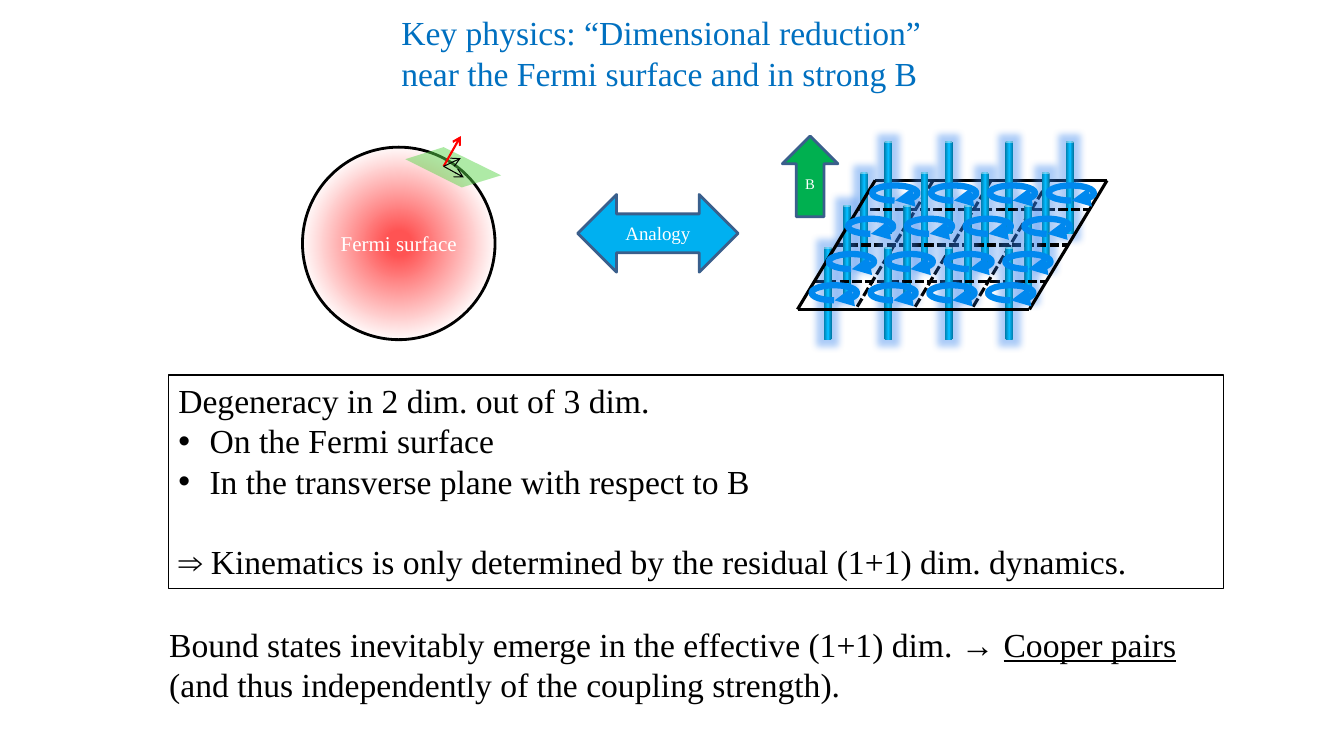
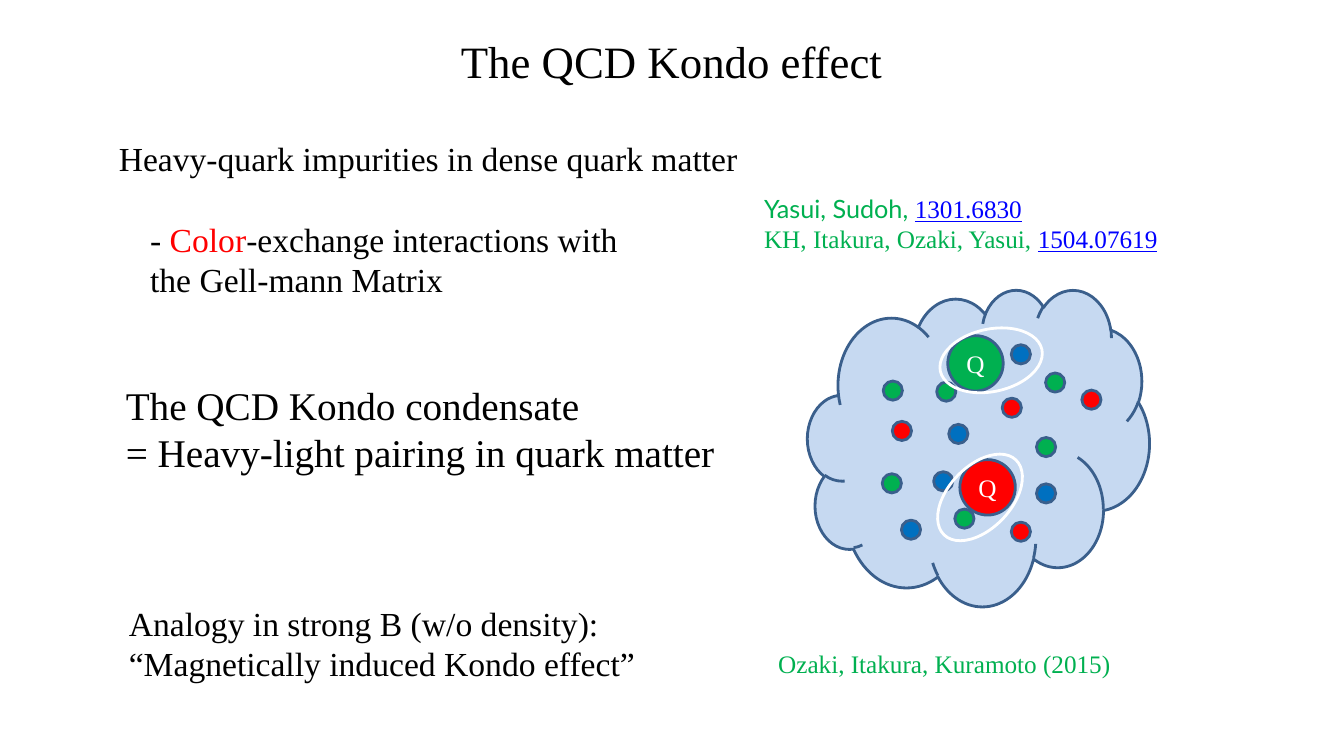
from dataclasses import dataclass

from lxml.etree import SubElement
from pptx import Presentation
from pptx.dml.color import RGBColor
from pptx.enum.dml import MSO_LINE
from pptx.enum.shapes import MSO_CONNECTOR, MSO_SHAPE
from pptx.enum.text import MSO_ANCHOR, MSO_AUTO_SIZE, PP_ALIGN
from pptx.oxml.ns import qn
from pptx.util import Inches, Pt

CELL = Inches(1) / 6  # the slide is a grid of 80 columns and 45 rows
SERIF, SANS = "Times New Roman", "Lato"
BLACK, WHITE, RED, GREEN, BLUE = "000000", "FFFFFF", "FF0000", "00B050", "0070C0"
SKY, OUTLINE, CLOUD, RING, LINK = "00B0F0", "3A5F8C", "C6D9F1", "0088EE", "0000FF"
CAN_STOPS = ((0, "0079A6"), (50, "04BCFF"), (100, "0079A6"))
LINK_FORMAT = {"color": LINK, "font": SERIF, "underline": True}


@dataclass
class Box:
    """An area of the slide, in grid columns and rows."""
    left: float
    top: float
    width: float
    height: float

    def point(self, x, y):
        """EMU position of a point given in percent of the box."""
        return (round((self.left + self.width * x / 100) * CELL),
                round((self.top + self.height * y / 100) * CELL))

    def inner(self, x, y, width, height):
        """A smaller box given in percent of this one."""
        return Box(self.left + self.width * x / 100, self.top + self.height * y / 100,
                   self.width * width / 100, self.height * height / 100)

    def emu(self):
        return [round(n * CELL) for n in (self.left, self.top, self.width, self.height)]


def rgb(value):
    return RGBColor.from_string(value)


def properties(shape):
    return shape._element.spPr


def write_text(shape, paragraphs, size=24, color=BLACK, font=SERIF,
               align=PP_ALIGN.LEFT, anchor=MSO_ANCHOR.TOP, wrap=True):
    """Fill a shape; a paragraph is a string or a list of (text, format) runs."""
    frame = shape.text_frame
    frame.word_wrap = wrap
    frame.auto_size = MSO_AUTO_SIZE.NONE
    frame.vertical_anchor = anchor
    for index, runs in enumerate(paragraphs):
        paragraph = frame.add_paragraph() if index else frame.paragraphs[0]
        paragraph.alignment = align
        for text, changes in ([(runs, {})] if isinstance(runs, str) else runs):
            run = paragraph.add_run()
            run.text = text
            run.font.size = Pt(size)
            run.font.name = changes.get("font", font)
            run.font.color.rgb = rgb(changes.get("color", color))
            run.font.underline = changes.get("underline")
    return frame


def add_text(slide, box, paragraphs, **text_format):
    return write_text(slide.shapes.add_textbox(*box.emu()), paragraphs, **text_format)


def add_title_slide(presentation, box, paragraphs, **text_format):
    slide = presentation.slides.add_slide(presentation.slide_layouts[5])
    title = slide.shapes.title
    title.left, title.top, title.width, title.height = box.emu()
    write_text(title, paragraphs, **text_format)
    return slide


def format_shape(shape, fill=None, line=None, line_width=2):
    shape.shadow.inherit = False
    if fill:
        shape.fill.solid()
        shape.fill.fore_color.rgb = rgb(fill)
    else:
        shape.fill.background()
    if line:
        shape.line.color.rgb = rgb(line)
        shape.line.width = Pt(line_width)
    else:
        shape.line.fill.background()


def add_shape(slide, kind, box, label=None, label_size=18, **shape_format):
    shape = slide.shapes.add_shape(kind, *box.emu())
    format_shape(shape, **shape_format)
    if label:
        write_text(shape, [label], size=label_size, color=WHITE, align=PP_ALIGN.CENTER,
                   anchor=MSO_ANCHOR.MIDDLE, wrap=False)
    return shape


def set_gradient(shape, stops, radial=False):
    shape.fill.gradient()
    gradient = properties(shape).find(qn("a:gradFill"))
    gradient.clear()
    stop_list = SubElement(gradient, qn("a:gsLst"))
    for position, color in stops:
        stop = SubElement(stop_list, qn("a:gs"), pos=str(position * 1000))
        SubElement(stop, qn("a:srgbClr"), val=color)
    if radial:
        circle = SubElement(gradient, qn("a:path"), {"path": "circle"})
        SubElement(circle, qn("a:fillToRect"), {side: "50000" for side in "ltrb"})
    else:
        SubElement(gradient, qn("a:lin"), ang="0", scaled="0")


def set_alpha(color_parent, percent):
    SubElement(color_parent.find(qn("a:srgbClr")), qn("a:alpha"), val=str(percent * 1000))


def add_glow(shape, color, radius, opacity):
    effects = properties(shape).find(qn("a:effectLst"))
    glow = SubElement(effects, qn("a:glow"), rad=str(Pt(radius)))
    SubElement(glow, qn("a:srgbClr"), val=color)
    set_alpha(glow, opacity)


def add_arrowhead(shape, kind):
    SubElement(properties(shape).find(qn("a:ln")), qn("a:tailEnd"), type=kind)


def add_line(slide, start, end, color=BLACK, width=2.25, dashed=False, head=None):
    line = slide.shapes.add_connector(MSO_CONNECTOR.STRAIGHT, *start, *end)
    line.line.color.rgb = rgb(color)
    line.line.width = Pt(width)
    if dashed:
        line.line.dash_style = MSO_LINE.SQUARE_DOT
    if head:
        add_arrowhead(line, head)
    SubElement(properties(line), qn("a:effectLst"))


def draw_fermi_sphere(slide, box):
    sphere = add_shape(slide, MSO_SHAPE.OVAL, box.inner(0, 8.4, 76.4, 76.4),
                       "Fermi surface", 15, line=BLACK)
    set_gradient(sphere, ((9, "FF5353"), (73, WHITE)), radial=True)

    corners = [box.point(*corner) for corner in
               ((40.8, 13.2), (56, 8.4), (78.8, 19.6), (63.2, 24.4))]
    builder = slide.shapes.build_freeform(*corners[0])
    builder.add_line_segments(corners[1:])
    tangent_plane = builder.convert_to_shape()
    format_shape(tangent_plane, fill="5BD54B")
    set_alpha(properties(tangent_plane).find(qn("a:solidFill")), 49)

    for end, color, width in (((62.8, 4), RED, 1.5), ((64, 20.4), BLACK, 0.75),
                              ((62.8, 12.8), BLACK, 0.75)):
        add_line(slide, box.point(56, 16), box.point(*end), color, width, head="arrow")


def draw_cyclotron_ring(slide, box):
    for start, end, head in ((174.4, 87.58, "triangle"), (92, 178.1, None)):
        arc = add_shape(slide, MSO_SHAPE.ARC, box, line=RING, line_width=4.5)
        arc.adjustments[0], arc.adjustments[1] = start * 0.6, end * 0.6
        if head:
            add_arrowhead(arc, head)


def draw_landau_lattice(slide, box):
    """A slanted plane crossed by field lines, each with a ring around it."""
    top, bottom, width, slant = 21.6, 72.8, 57.5, 19.25
    count = 4

    def plane_point(column, y):
        edge = 29.5 - slant * (y - top) / (bottom - top)
        return box.point(edge + width * column / count, y)

    def draw_column(column, dashed):
        add_line(slide, plane_point(column, top), plane_point(column, bottom), dashed=dashed)

    def draw_row(y, dashed):
        add_line(slide, plane_point(0, y), plane_point(count, y), dashed=dashed)

    add_shape(slide, MSO_SHAPE.UP_ARROW, box.inner(6.5, 4, 13.75, 32), "B", 10.5,
              fill=GREEN, line=OUTLINE)
    for column in range(1, count):
        draw_column(column, True)
    can_rows = ((31.75, 6), (25.75, 18.4), (21.5, 31.2), (16.75, 48))
    for y, (can_left, can_top) in zip((top, 33.2, 47.2, 61.6), can_rows):
        draw_row(y, y != top)
        for column in range(count):
            can = add_shape(slide, MSO_SHAPE.CAN,
                            box.inner(can_left + 15 * column, can_top, 2, 36.8))
            set_gradient(can, CAN_STOPS)
            add_glow(can, "2F80EE", 10, 40)
    draw_row(bottom, False)
    for column in (0, count):
        draw_column(column, False)
    for left, ring_top in ((28.75, 23.6), (22.75, 36.8), (18, 50.8), (13.75, 63.2)):
        for column in range(count):
            draw_cyclotron_ring(slide, box.inner(left + 14.58 * column, ring_top, 11.25, 6))


def draw_degeneracy_panel(slide, box):
    panel = add_shape(slide, MSO_SHAPE.RECTANGLE, box, line=BLACK, line_width=0.75)
    frame = write_text(panel, [
        "Degeneracy in 2 dim. out of 3 dim.",
        "On the Fermi surface",
        "In the transverse plane with respect to B",
        "⇒ Kinematics is only determined by the residual (1+1) dim. dynamics."])
    for paragraph in frame.paragraphs[1:3]:
        layout = paragraph._p.get_or_add_pPr()
        layout.set("marL", str(Inches(0.31)))
        layout.set("indent", str(-Inches(0.31)))
        SubElement(layout, qn("a:buFont"), typeface="Arial")
        SubElement(layout, qn("a:buChar"), char="•")
    frame.paragraphs[3].space_before = Pt(28.8)


def draw_quark_matter(slide, box):
    add_shape(slide, MSO_SHAPE.CLOUD, box.inner(0.25, 3, 84.75, 78.5),
              fill=CLOUD, line=OUTLINE)
    for x, y, color in ((38, 45.25, RED), (35, 14.5, GREEN)):
        add_shape(slide, MSO_SHAPE.OVAL, box.inner(x, y, 13.75, 13.75), "Q",
                  fill=color, line=OUTLINE)
    light_quarks = {
        RED: ((68.25, 28), (21.25, 35.75), (48.5, 30), (50.75, 60.75)),
        GREEN: ((36.75, 57.5), (19, 25.75), (18.75, 48.75), (57, 39.75),
                (59.25, 23.75), (32.25, 26)),
        BLUE: ((31.5, 48.25), (57, 51.25), (35.25, 36.5), (23.5, 60.25), (50.75, 16.75)),
    }
    for color, places in light_quarks.items():
        for x, y in places:
            add_shape(slide, MSO_SHAPE.OVAL, box.inner(x, y, 4.75, 4.75),
                      fill=color, line=OUTLINE)
    for x, y, angle in ((38, 7.75, 78), (35.25, 41.75, 43.7)):
        pair = add_shape(slide, MSO_SHAPE.OVAL, box.inner(x, y, 15.5, 25.75), line=WHITE)
        pair.rotation = angle


def build_reduction_slide(presentation):
    slide = add_title_slide(presentation, Box(23.28, 0.42, 32.94, 5.46),
                            ["Key physics: “Dimensional reduction”",
                             "near the Fermi surface and in strong B"], color=BLUE)
    draw_fermi_sphere(slide, Box(18, 7.5, 15, 15))
    add_shape(slide, MSO_SHAPE.LEFT_RIGHT_ARROW, Box(34.38, 11.58, 9.54, 4.62),
              "Analogy", 13.5, fill=SKY, line=OUTLINE)
    draw_degeneracy_panel(slide, Box(10.02, 22.32, 62.82, 12.72))
    draw_landau_lattice(slide, Box(45, 7.5, 24, 15))
    add_text(slide, Box(9.48, 36.84, 70.5, 5.46), [
        [("Bound states inevitably emerge in the effective (1+1) dim. → ", {}),
         ("Cooper pairs", {"underline": True})],
        "(and thus independently of the coupling strength)."])


def build_kondo_slide(presentation):
    slide = add_title_slide(presentation, Box(26.82, 1.68, 28.32, 3.84),
                            ["The QCD Kondo effect"], size=32)
    add_text(slide, Box(6.48, 7.92, 47.4, 3),
             ["Heavy-quark impurities in dense quark matter"])
    add_text(slide, Box(8.34, 12.72, 31.5, 5.46), [
        [("- ", {}), ("Color", {"color": RED}),
         ("-exchange interactions with the Gell-mann Matrix", {})]])
    add_text(slide, Box(6.9, 22.38, 43.44, 6.24),
             ["The QCD Kondo condensate", "= Heavy-light pairing in quark matter"], size=28)
    add_text(slide, Box(7.08, 35.58, 37.2, 5.46),
             ["Analogy in strong B (w/o density): “Magnetically induced Kondo effect”"])
    add_text(slide, Box(44.88, 11.22, 30, 4.26), [
        [("Yasui, Sudoh, ", {"font": SANS}), ("1301.6830", LINK_FORMAT)],
        [("KH, Itakura, Ozaki, Yasui, ", {}), ("1504.07619", LINK_FORMAT)]],
        size=18, color=GREEN)
    add_text(slide, Box(45.72, 38.28, 26.4, 2.4),
             ["Ozaki, Itakura, Kuramoto (2015)"], size=18, color=GREEN)
    draw_quark_matter(slide, Box(48, 16.5, 24, 24))


def main():
    presentation = Presentation()
    presentation.slide_width, presentation.slide_height = Inches(13.33), Inches(7.5)
    build_reduction_slide(presentation)
    build_kondo_slide(presentation)
    presentation.save("out.pptx")


if __name__ == "__main__":
    main()
